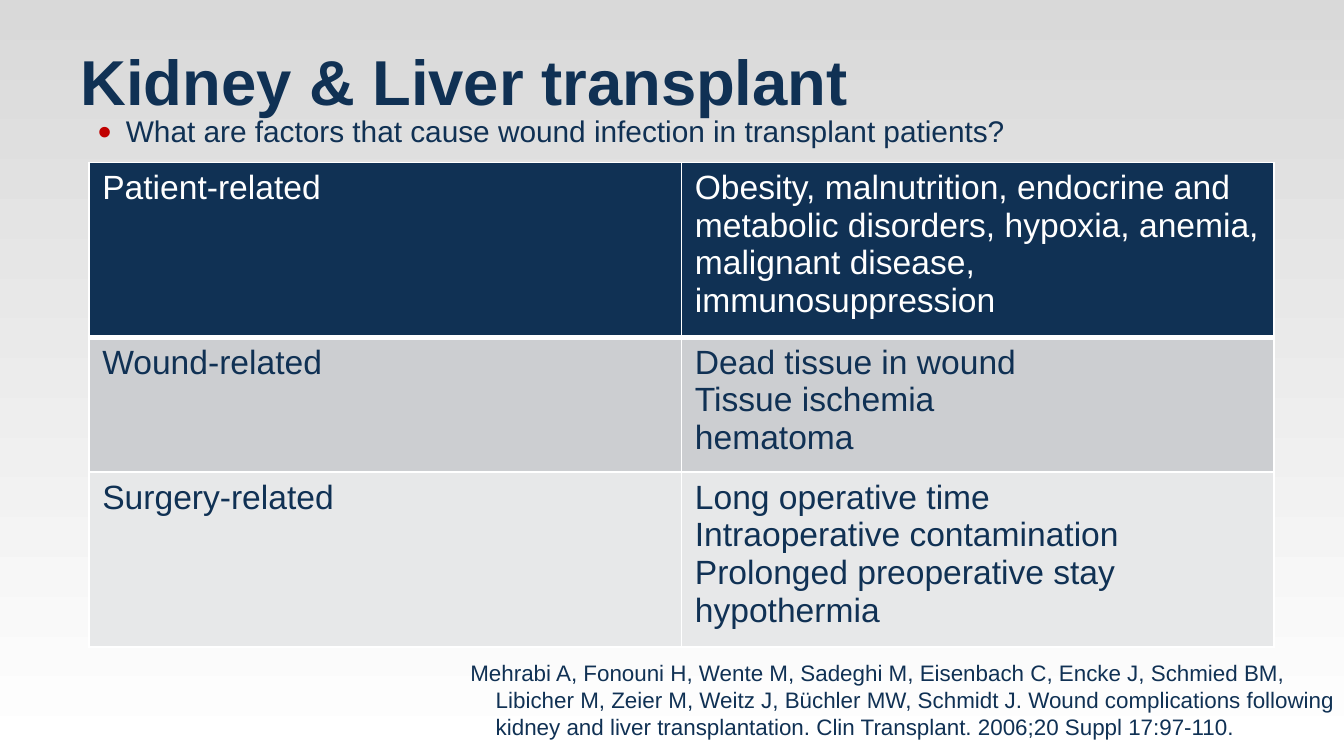
from lxml.etree import SubElement
from pptx import Presentation
from pptx.dml.color import RGBColor
from pptx.oxml.ns import qn
from pptx.util import Cm, Pt

NAVY = RGBColor(0x10, 0x31, 0x54)
RED = RGBColor(0xC0, 0x00, 0x00)
WHITE = RGBColor(0xFF, 0xFF, 0xFF)
BACKDROP_GREY = RGBColor(0xD9, 0xD9, 0xD9)
MID_GREY = RGBColor(0xCC, 0xCE, 0xD1)
PALE_GREY = RGBColor(0xE7, 0xE8, 0xE9)

TITLE = "Kidney & Liver transplant"
QUESTION = "What are factors that cause wound infection in transplant patients?"
CITATION = (
    "Mehrabi A, Fonouni H, Wente M, Sadeghi M, Eisenbach C, Encke J, Schmied BM, "
    "Libicher M, Zeier M, Weitz J, Büchler MW, Schmidt J. Wound complications following "
    "kidney and liver transplantation. Clin Transplant. 2006;20 Suppl 17:97-110."
)
# category, factors, row height in cm, fill, text colour, bottom border in pt
FACTOR_ROWS = [
    ("Patient-related",
     ["Obesity, malnutrition, endocrine and metabolic disorders, hypoxia, anemia, "
      "malignant disease, immunosuppression"],
     3.29, NAVY, WHITE, 3),
    ("Wound-related",
     ["Dead tissue in wound", "Tissue ischemia", "hematoma"],
     2.55, MID_GREY, NAVY, 1),
    ("Surgery-related",
     ["Long operative time", "Intraoperative contamination",
      "Prolonged preoperative stay", "hypothermia"],
     3.3, PALE_GREY, NAVY, 1),
]
TABLE_LEFT, TABLE_TOP, COLUMN_WIDTH = 1.68, 3.07, 11.2


def write(frame, lines, size, color=NAVY, bold=False):
    """Fill a text frame, one paragraph for each line."""
    frame.word_wrap = True
    frame.text = "\n".join(lines)
    look = {"name": "Arial", "size": Pt(size), "bold": bold}
    for paragraph in frame.paragraphs:
        for key, value in look.items():
            setattr(paragraph.font, key, value)
        paragraph.font.color.rgb = color
        for run in paragraph.runs:
            for key, value in look.items():
                setattr(run.font, key, value)
            run.font.color.rgb = color


def add_text(slide, box, text, size, hanging=0, bold=False):
    frame = slide.shapes.add_textbox(*map(Cm, box)).text_frame
    write(frame, [text], size, bold=bold)
    paragraph = frame.paragraphs[0]
    if hanging:
        properties = paragraph._p.get_or_add_pPr()
        properties.set("marL", str(Cm(hanging)))
        properties.set("indent", str(-Cm(hanging)))
    return paragraph


def add_bullet(paragraph, color, percent):
    properties = paragraph._p.get_or_add_pPr()
    bullet_color = SubElement(properties, qn("a:buClr"))
    SubElement(bullet_color, qn("a:srgbClr"), val=str(color))
    SubElement(properties, qn("a:buSzPct"), val=str(percent * 1000))
    SubElement(properties, qn("a:buFont"), typeface="Arial")
    SubElement(properties, qn("a:buChar"), char="•")


def set_borders(cell, widths):
    properties = cell._tc.get_or_add_tcPr()
    for side, width in widths.items():
        line = SubElement(properties, qn(f"a:ln{side}"), w=str(Pt(width)))
        fill = SubElement(line, qn("a:solidFill"))
        SubElement(fill, qn("a:srgbClr"), val=str(WHITE))


def add_factor_table(slide):
    height = sum(row[2] for row in FACTOR_ROWS)
    table = slide.shapes.add_table(
        len(FACTOR_ROWS), 2, Cm(TABLE_LEFT), Cm(TABLE_TOP),
        Cm(2 * COLUMN_WIDTH), Cm(height)).table
    for column in table.columns:
        column.width = Cm(COLUMN_WIDTH)
    top_border = 1
    for i, (category, factors, row_height, fill, color, border) in enumerate(FACTOR_ROWS):
        table.rows[i].height = Cm(row_height)
        for j, lines in enumerate(([category], factors)):
            cell = table.cell(i, j)
            write(cell.text_frame, lines, 18, color)
            set_borders(cell, {"L": 1, "R": 1, "T": top_border, "B": border})
            cell.fill.solid()
            cell.fill.fore_color.rgb = fill
        top_border = border


def main():
    deck = Presentation()
    deck.slide_width, deck.slide_height = Cm(25.4), Cm(14.29)
    slide = deck.slides.add_slide(deck.slide_layouts[6])

    backdrop = slide.background.fill
    backdrop.gradient()
    backdrop.gradient_angle = 90
    for stop, color in zip(backdrop.gradient_stops, (WHITE, BACKDROP_GREY)):
        stop.color.rgb = color

    add_text(slide, (1.27, 0.68, 22.86, 1.6), TITLE, 34, bold=True)
    question = add_text(slide, (1.6, 2.06, 18.85, 0.95), QUESTION, 16, hanging=0.53)
    question.line_spacing = 0.95
    add_bullet(question, RED, 130)
    add_factor_table(slide)
    add_text(slide, (8.64, 12.34, 17.35, 1.8), CITATION, 12, hanging=0.48)

    deck.save("out.pptx")


if __name__ == "__main__":
    main()
